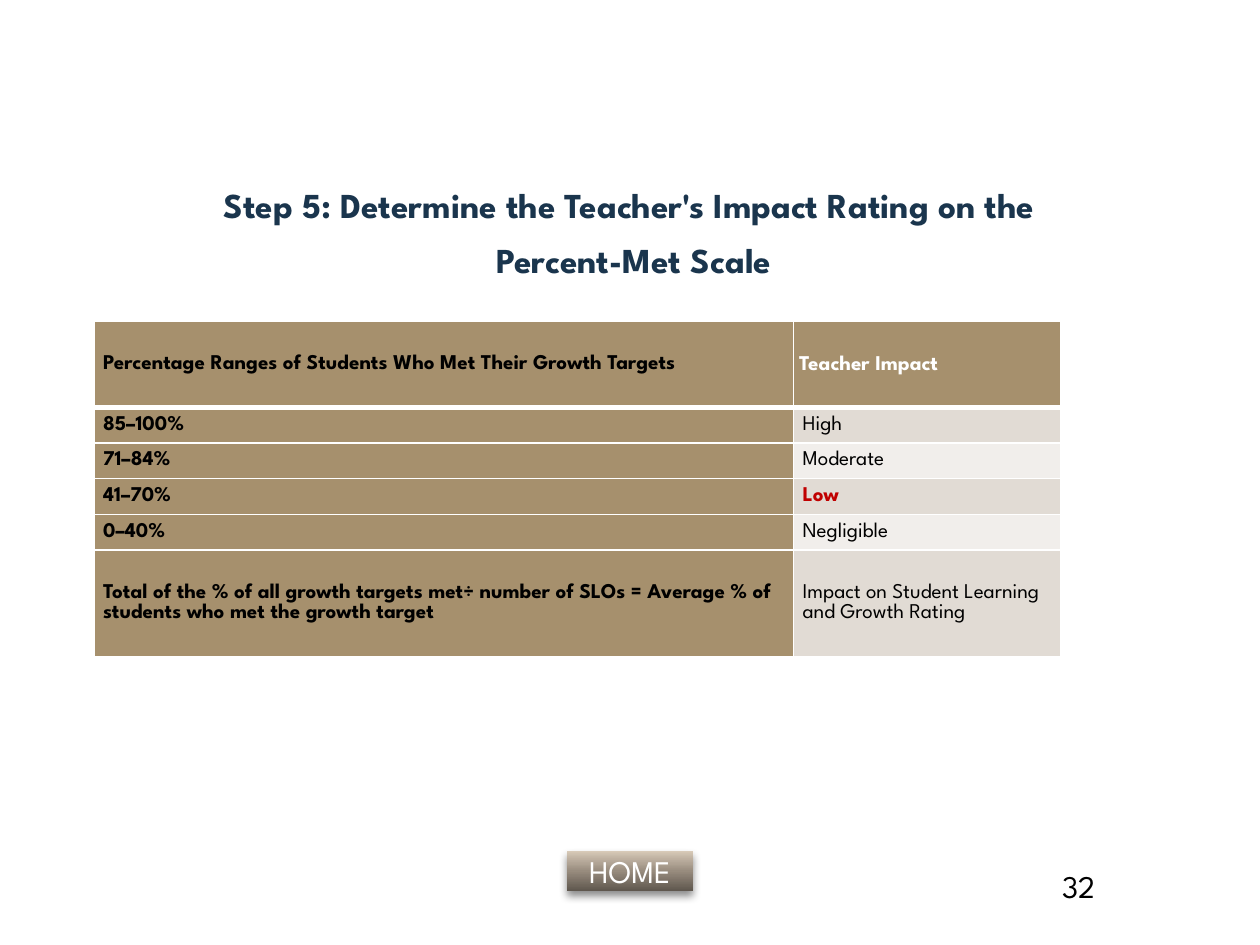
from lxml import etree
from pptx import Presentation
from pptx.dml.color import RGBColor
from pptx.enum.shapes import MSO_SHAPE
from pptx.enum.text import MSO_ANCHOR, MSO_AUTO_SIZE, PP_ALIGN
from pptx.oxml import parse_xml
from pptx.oxml.ns import nsdecls, qn
from pptx.util import Cm, Pt

BUTTON = MSO_SHAPE.ACTION_BUTTON_CUSTOM
MIDDLE = MSO_ANCHOR.MIDDLE
NO_FIT = MSO_AUTO_SIZE.NONE
CENTER = PP_ALIGN.CENTER

BLACK, WHITE, NAVY, RED = "000000", "FFFFFF", "1A354D", "C00000"
TAN, BAND_DARK, BAND_LIGHT = "A6906D", "E1DBD4", "F1EEEB"
BUTTON_STOPS = [(0, "5F574E"), (50, "988C7E"), (70, "B2A596"), (100, "D8CAB8")]

HEADINGS = ("Percentage Ranges of Students Who Met Their Growth Targets", " Teacher Impact")
RATINGS = [
    ("85–100%", "High"),
    ("71–84%", "Moderate"),
    ("41–70%", "Low"),
    ("0–40%", "Negligible"),
    ("Total of the % of all growth targets met÷ number of SLOs = Average % of "
     "students who met the growth target",
     "Impact on Student Learning and Growth Rating"),
]
COLUMN_WIDTHS = [14.1, 5.38]
ROW_HEIGHTS = [1.73] + [0.72] * 4 + [2.15]


def color(value):
    return RGBColor.from_string(value)


class SlideBuilder:
    font = "League Spartan"

    def __init__(self, deck):
        self.page = deck.slides.add_slide(deck.slide_layouts[5])

    def fill_text(self, frame, text, size, ink, bold=False, align=None):
        frame.text = text
        for para in frame.paragraphs:
            if align is not None:
                para.alignment = align
            for span in para.runs:
                span.font.name = self.font
                span.font.size = Pt(size)
                span.font.bold = bold
                span.font.color.rgb = color(ink)

    def title(self, text, left, top, width, height):
        box = self.page.shapes.title
        box.left, box.top, box.width, box.height = map(Cm, (left, top, width, height))
        frame = box.text_frame
        frame.auto_size = NO_FIT
        frame.vertical_anchor = MIDDLE
        self.fill_text(frame, text, 20, NAVY, True, CENTER)
        frame.paragraphs[0].line_spacing = 1.3

    def label(self, text, left, top, width, height):
        box = self.page.shapes.add_textbox(*map(Cm, (left, top, width, height)))
        box.text_frame.word_wrap = True
        self.fill_text(box.text_frame, text, 18, BLACK)

    def button(self, text, left, top, width, height):
        box = self.page.shapes.add_shape(BUTTON, *map(Cm, (left, top, width, height)))
        box.line.fill.background()
        stops = "".join(
            f'<a:gs pos="{place * 1000}"><a:srgbClr val="{shade}"/></a:gs>'
            for place, shade in BUTTON_STOPS)
        gradient = parse_xml(
            f'<a:gradFill {nsdecls("a")} rotWithShape="1"><a:gsLst>{stops}</a:gsLst>'
            '<a:lin ang="16200000" scaled="0"/></a:gradFill>')
        properties = box.element.spPr
        properties.find(qn("a:prstGeom")).addnext(gradient)
        properties.append(parse_xml(
            f'<a:effectLst {nsdecls("a")}><a:outerShdw blurRad="{Pt(5)}" dist="{Pt(3)}" '
            'dir="5400000" rotWithShape="0"><a:srgbClr val="000000">'
            '<a:alpha val="45000"/></a:srgbClr></a:outerShdw></a:effectLst>'))
        box.text_frame.vertical_anchor = MIDDLE
        self.fill_text(box.text_frame, text, 18, WHITE, align=CENTER)

    def cell(self, cell, text, fill, ink, bold, bottom=1):
        properties = cell._tc.get_or_add_tcPr()
        for side, width in (("L", 1), ("R", 1), ("T", 1), ("B", bottom)):
            line = etree.SubElement(properties, qn(f"a:ln{side}"), w=str(Pt(width)))
            paint = etree.SubElement(line, qn("a:solidFill"))
            etree.SubElement(paint, qn("a:srgbClr"), val=WHITE)
        cell.fill.solid()
        cell.fill.fore_color.rgb = color(fill)
        cell.vertical_anchor = MIDDLE
        cell.margin_left = cell.margin_right = Cm(0.18)
        cell.margin_top = cell.margin_bottom = 0
        self.fill_text(cell.text_frame, text, 12, ink, bold)

    def rating_table(self, left, top):
        table = self.page.shapes.add_table(
            len(ROW_HEIGHTS), len(COLUMN_WIDTHS), Cm(left), Cm(top),
            Cm(sum(COLUMN_WIDTHS)), Cm(sum(ROW_HEIGHTS))).table
        for column, width in zip(table.columns, COLUMN_WIDTHS):
            column.width = Cm(width)
        for row, height in zip(table.rows, ROW_HEIGHTS):
            row.height = Cm(height)
        for column, (heading, ink) in enumerate(zip(HEADINGS, (BLACK, WHITE))):
            self.cell(table.cell(0, column), heading, TAN, ink, True, 3)
        impact = table.cell(0, 1)
        impact.margin_left = impact.margin_right = 0
        impact.text_frame.paragraphs[0].line_spacing = 1.15
        for index, (percentages, rating) in enumerate(RATINGS, 1):
            low = rating == "Low"
            band = BAND_DARK if index % 2 else BAND_LIGHT
            self.cell(table.cell(index, 0), percentages, TAN, BLACK, True)
            self.cell(table.cell(index, 1), rating, band, RED if low else BLACK, low)


def main():
    deck = Presentation()
    deck.slide_width, deck.slide_height = Cm(25.4), Cm(19.05)
    builder = SlideBuilder(deck)
    builder.button("HOME", 11.43, 17.15, 2.54, 0.81)
    builder.title("Step 5: Determine the Teacher's Impact Rating on the \vPercent-Met Scale",
                  0.08, 3.38, 25.4, 2.34)
    builder.rating_table(1.9, 6.48)
    builder.label("32", 21.16, 17.35, 2.97, 1.32)
    deck.save("out.pptx")


if __name__ == "__main__":
    main()
